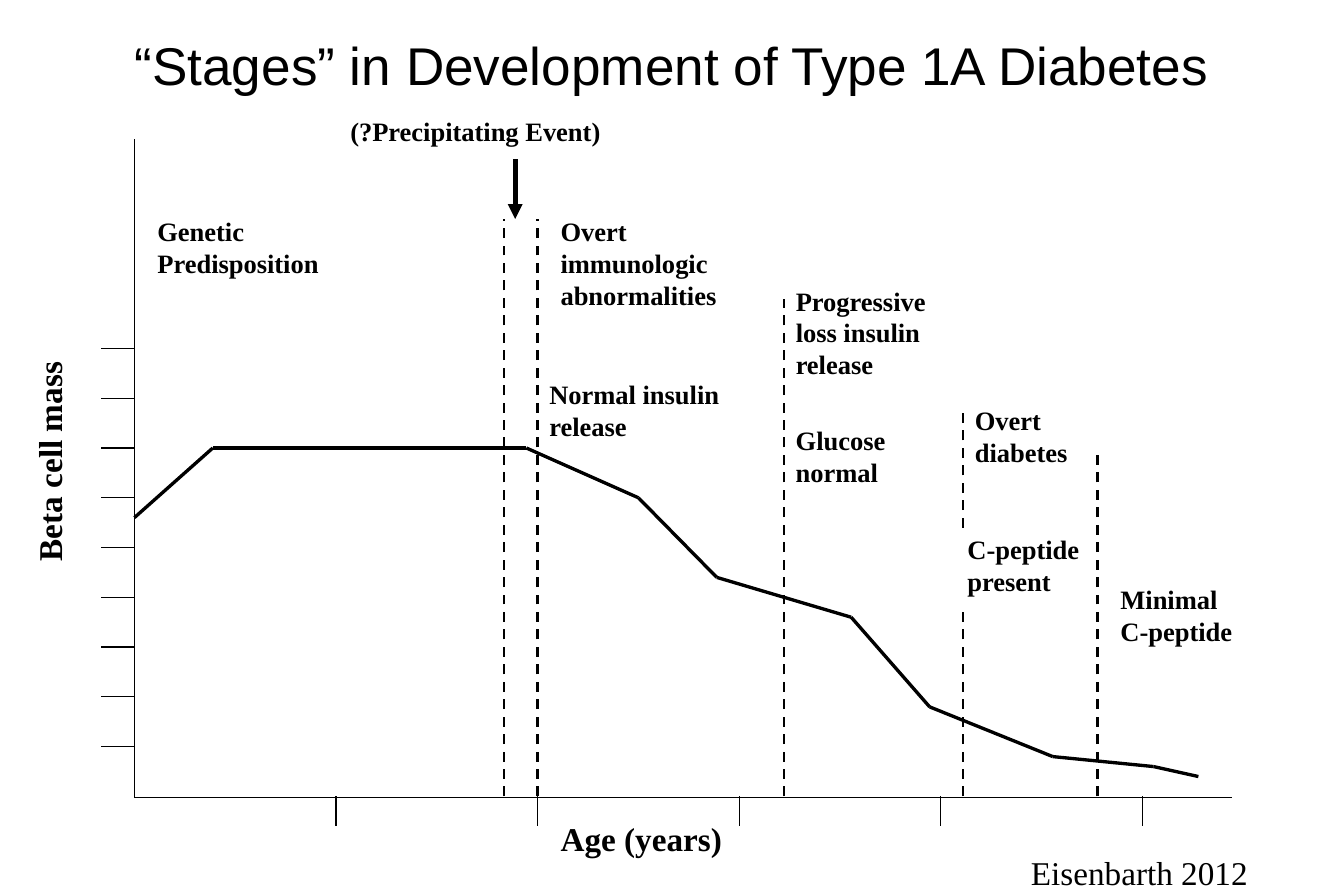
"""Build the slide on the stages in the development of type 1A diabetes."""
from itertools import pairwise

from pptx import Presentation
from pptx.dml.color import RGBColor
from pptx.enum.dml import MSO_LINE
from pptx.enum.shapes import MSO_CONNECTOR
from pptx.enum.text import MSO_ANCHOR, MSO_AUTO_SIZE, PP_ALIGN
from pptx.oxml.ns import qn
from pptx.util import Pt
from lxml.etree import SubElement

PX = 9525
BLACK = RGBColor(0, 0, 0)
SERIF = "Times New Roman"

deck = Presentation()
deck.slide_width, deck.slide_height = 1080 * PX, 720 * PX
slide = deck.slides.add_slide(deck.slide_layouts[6])


def add_text(text, left, top, width, height, size=16, font=SERIF, bold=True,
             align=PP_ALIGN.LEFT, wrap=False, anchor=MSO_ANCHOR.TOP, rotation=0):
    box = slide.shapes.add_textbox(left * PX, top * PX, width * PX, height * PX)
    box.rotation = rotation
    frame = box.text_frame
    frame.word_wrap = wrap
    frame.auto_size = MSO_AUTO_SIZE.NONE if wrap else MSO_AUTO_SIZE.SHAPE_TO_FIT_TEXT
    frame.vertical_anchor = anchor
    frame.text = text
    for para in frame.paragraphs:
        para.alignment = align
        for span in para.runs:
            span.font.size = Pt(size)
            span.font.name = font
            span.font.bold = bold
            span.font.color.rgb = BLACK


def add_line(start, end, weight=0.75, dashed=False, arrow=False):
    line = slide.shapes.add_connector(
        MSO_CONNECTOR.STRAIGHT, *(value * PX for value in (*start, *end)))
    line.line.color.rgb = BLACK
    line.line.width = Pt(weight)
    if dashed:
        line.line.dash_style = MSO_LINE.DASH
    if arrow:
        SubElement(line.line._get_or_add_ln(), qn("a:tailEnd"), type="triangle")
    SubElement(line._element.spPr, qn("a:effectLst"))


add_text("“Stages” in Development of Type 1A Diabetes", 0, 16, 1080, 72, size=32,
         font="Arial", bold=False, align=PP_ALIGN.CENTER, wrap=True,
         anchor=MSO_ANCHOR.MIDDLE)

axis_left, axis_bottom = 108, 641
add_line((axis_left, 112), (axis_left, axis_bottom))
add_line((axis_left, axis_bottom), (990, axis_bottom))
for index in range(5):
    tick_x = 270 + 162 * index
    add_line((tick_x, 640), (tick_x, 664))
for index in range(9):
    tick_y = 280 + 40 * index
    add_line((axis_left, tick_y), (81, tick_y))

stage_borders = [(405, 640, 176), (432, 640, 176), (630, 640, 240),
                 (774, 640, 488), (774, 424, 328), (882, 640, 360)]
for border_x, bottom, top in stage_borders:
    add_line((border_x, bottom), (border_x, top), weight=1.5, dashed=True)

add_line((414, 128), (414, 176), weight=3, arrow=True)

beta_cell_curve = [(108, 416), (171, 360), (423, 360), (513, 400), (576, 464),
                   (684, 496), (747, 568), (846, 608), (927, 616), (963, 624)]
for start, end in pairwise(beta_cell_curve):
    add_line(start, end, weight=3 if start[1] == end[1] else 2)

stage_labels = [
    ("Genetic\nPredisposition", 117, 168, 151, 61),
    ("Overt\nimmunologic\nabnormalities", 441, 168, 147, 87),
    ("Normal insulin\nrelease", 432, 299, 157, 61),
    ("Progressive\nloss insulin\nrelease", 630, 224, 124, 87),
    ("Glucose\nnormal", 630, 336, 92, 61),
    ("Overt\ndiabetes", 774, 320, 95, 61),
    ("C-peptide\npresent", 768, 424, 110, 61),
    ("Minimal\nC-peptide", 891, 464, 110, 61),
]
for label in stage_labels:
    add_text(*label)

add_text("(?Precipitating Event)", 270, 88, 224, 36, align=PP_ALIGN.CENTER)
add_text("Age (years)", 441, 653, 150, 42, size=20)
add_text("Beta cell mass", -143, 257, 365, 42, size=20, wrap=True, rotation=270)
add_text("Eisenbarth 2012", 819, 680, 243, 42, size=20, bold=False, wrap=True)

deck.save("out.pptx")
